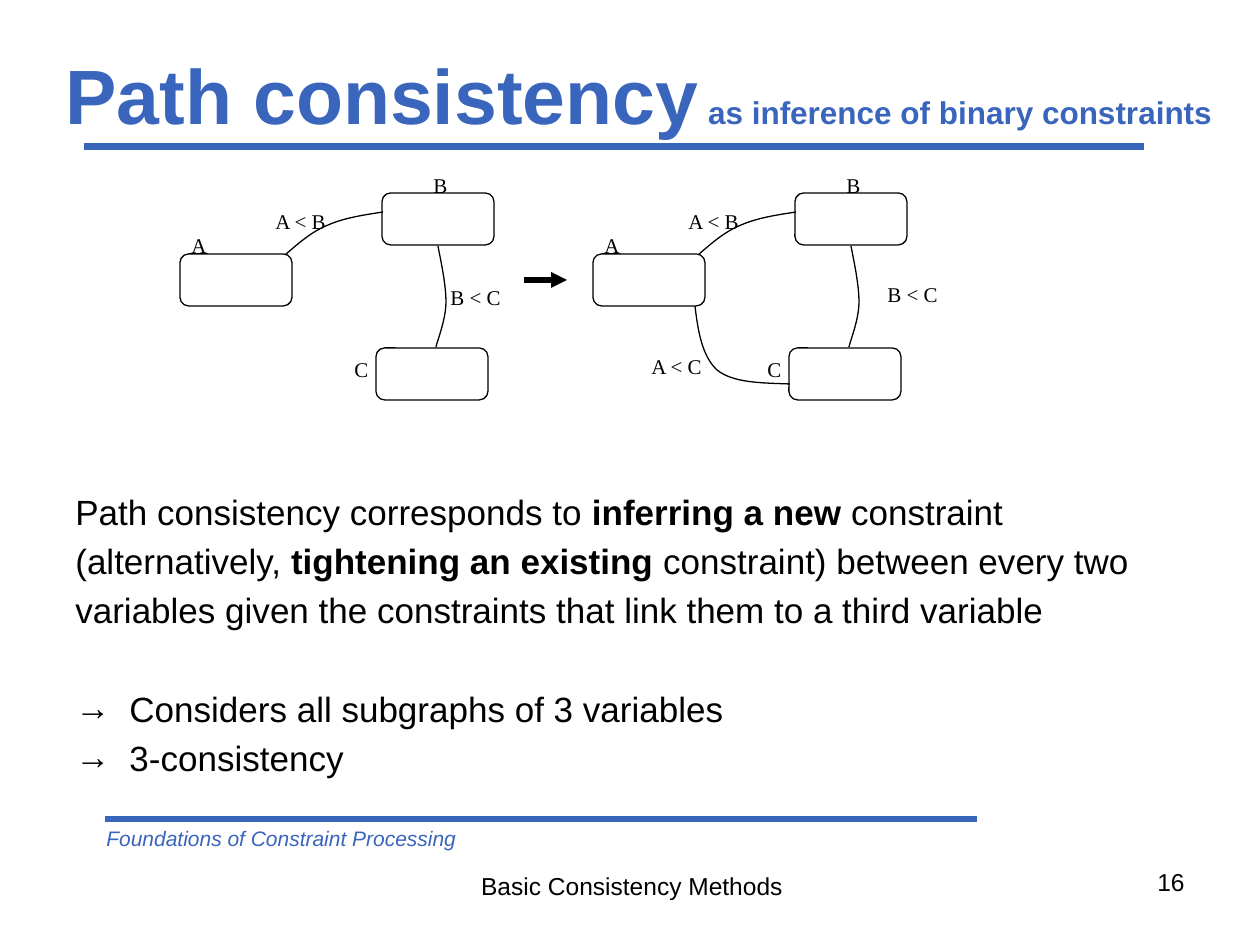
from lxml import etree
from pptx import Presentation, util as u
from pptx.dml.color import RGBColor
from pptx.enum import shapes, text
from pptx.oxml.ns import qn

COLORS = {"accent": "3A65BC", "ink": "000000", "paper": "FFFFFF"}
SCALE = u.Inches(1) / 126


def px(length):
    return u.Emu(round(length * SCALE))


class ConsistencySlide:
    """Holds the style and the current slide, and draws each kind of element."""

    sans, serif = "Arial", "Times New Roman"

    def __init__(self, deck):
        self.slide = deck.slides.add_slide(deck.slide_layouts[6])

    def color(self, name):
        return RGBColor.from_string(COLORS[name])

    def frame(self, left, top, width, height):
        box = self.slide.shapes.add_textbox(px(left), px(top), px(width), px(height))
        box.text_frame.word_wrap = True
        return box.text_frame

    def style(self, run, size, color="ink", font=sans, bold=False, italic=False):
        run.font.size = u.Pt(size)
        run.font.name = font
        run.font.bold = bold
        run.font.italic = italic
        run.font.color.rgb = self.color(color)

    def label(self, words, left, top, width, height, size=12, align="LEFT", **look):
        frame = self.frame(left, top, width, height)
        frame.text = words
        paragraph = frame.paragraphs[0]
        paragraph.alignment = getattr(text.PP_ALIGN, align)
        self.style(paragraph.runs[0], size, **look)

    def title(self, main, rest):
        frame = self.frame(53, 31, 1178, 126)
        frame.vertical_anchor = text.MSO_ANCHOR.MIDDLE
        for words, size in ((main, 44), (rest, 18)):
            run = frame.paragraphs[0].add_run()
            run.text = words
            self.style(run, size, "accent", bold=True)

    def body(self, statement, conclusions):
        frame = self.frame(63, 174, 1134, 624)
        frame.vertical_anchor = text.MSO_ANCHOR.BOTTOM
        frame.margin_bottom = px(20)
        for index, parts in enumerate(statement):
            paragraph = frame.paragraphs[0] if index == 0 else frame.add_paragraph()
            paragraph.space_before = u.Pt(4 if index else 0)
            for words, bold in parts:
                run = paragraph.add_run()
                run.text = words
                self.style(run, 20, bold=bold)
        for index, words in enumerate(conclusions):
            paragraph = frame.add_paragraph()
            self.bullet(paragraph, "→", 54)
            paragraph.space_before = u.Pt(4 if index else 32)
            paragraph.text = words
            self.style(paragraph.runs[0], 20)

    def bullet(self, paragraph, mark, indent):
        properties = paragraph._p.get_or_add_pPr()
        properties.set("marL", str(px(indent)))
        properties.set("indent", str(-px(indent)))
        etree.SubElement(properties, qn("a:buFont")).set("typeface", self.sans)
        etree.SubElement(properties, qn("a:buChar")).set("char", mark)

    def line(self, start, end, color, width, arrow=False):
        rule = self.slide.shapes.add_connector(
            shapes.MSO_CONNECTOR.STRAIGHT, *map(px, start + end))
        rule.line.color.rgb = self.color(color)
        rule.line.width = u.Pt(width)
        if arrow:
            outline = rule.line._get_or_add_ln()
            etree.SubElement(outline, qn("a:tailEnd")).set("type", "triangle")
        etree.SubElement(rule._element.spPr, qn("a:effectLst"))

    def outline(self, shape):
        shape.shadow.inherit = False
        shape.line.color.rgb = self.color("ink")
        shape.line.width = u.Pt(0.75)

    def node(self, left, top):
        box = self.slide.shapes.add_shape(
            shapes.MSO_SHAPE.ROUNDED_RECTANGLE, px(left), px(top), px(112), px(52))
        box.fill.solid()
        box.fill.fore_color.rgb = self.color("paper")
        self.outline(box)

    def curve(self, points, shift=0):
        start, *controls = [(px(x + shift), px(y)) for x, y in points]
        builder = self.slide.shapes.build_freeform(*start)
        builder.add_line_segments(controls, close=False)
        link = builder.convert_to_shape()
        segments = list(link._element.iter(qn("a:lnTo")))
        route = segments[0].getparent()
        for first in range(0, len(segments), 3):
            bend = etree.SubElement(route, qn("a:cubicBezTo"))
            for segment in segments[first:first + 3]:
                bend.append(segment[0])
                route.remove(segment)
        link.fill.background()
        self.outline(link)

    def constraint_label(self, words, left, top, width=87):
        self.label(words, left, top, width, 37, font=self.serif)

    def graph(self, shift):
        for left, top in ((180, 254), (382, 193), (376, 348)):
            self.node(left + shift, top)
        for name, left, top in (("A", 179, 226), ("B", 421, 166), ("C", 342, 350)):
            self.constraint_label(name, left + shift, top, 35)
        self.curve([(286, 254), (299, 243), (311, 232), (328, 225),
                    (344, 218), (363, 215), (383, 212)], shift)
        self.curve([(438, 246), (442, 266), (446, 286), (446, 302),
                    (446, 319), (438, 339), (436, 347)], shift)
        self.constraint_label("A < B", 263 + shift, 202)


def main():
    deck = Presentation()
    deck.slide_width, deck.slide_height = u.Inches(10), u.Inches(7.5)
    page = ConsistencySlide(deck)

    page.line((84, 147), (1144, 147), "accent", 4)
    page.line((105, 819), (977, 819), "accent", 4)
    page.label("Foundations of Constraint Processing", 94, 819, 662, 38,
               color="accent", italic=True)
    page.label("Basic Consistency Methods", 453, 865, 358, 43, 14, "CENTER")
    page.label("16", 904, 861, 293, 66, 14, "RIGHT")

    page.title("Path consistency", " as inference of binary constraints")
    page.body(
        [
            [("Path consistency corresponds to ", False), ("inferring a new", True),
             (" constraint", False)],
            [("(alternatively, ", False), ("tightening an existing", True),
             (" constraint) between every two", False)],
            [("variables given the constraints that link them to a third variable", False)],
        ],
        ["Considers all subgraphs of 3 variables", "3-consistency"],
    )

    for shift in (0, 413):
        page.graph(shift)
    page.constraint_label("B < C", 438, 278)
    page.constraint_label("B < C", 875, 275)
    page.line((524, 280), (567, 280), "ink", 3, arrow=True)
    page.curve([(695, 306), (698, 331), (702, 356), (717, 370),
                (733, 383), (761, 383), (790, 384)])
    page.constraint_label("A < C", 639, 347)

    deck.save("out.pptx")


if __name__ == "__main__":
    main()
